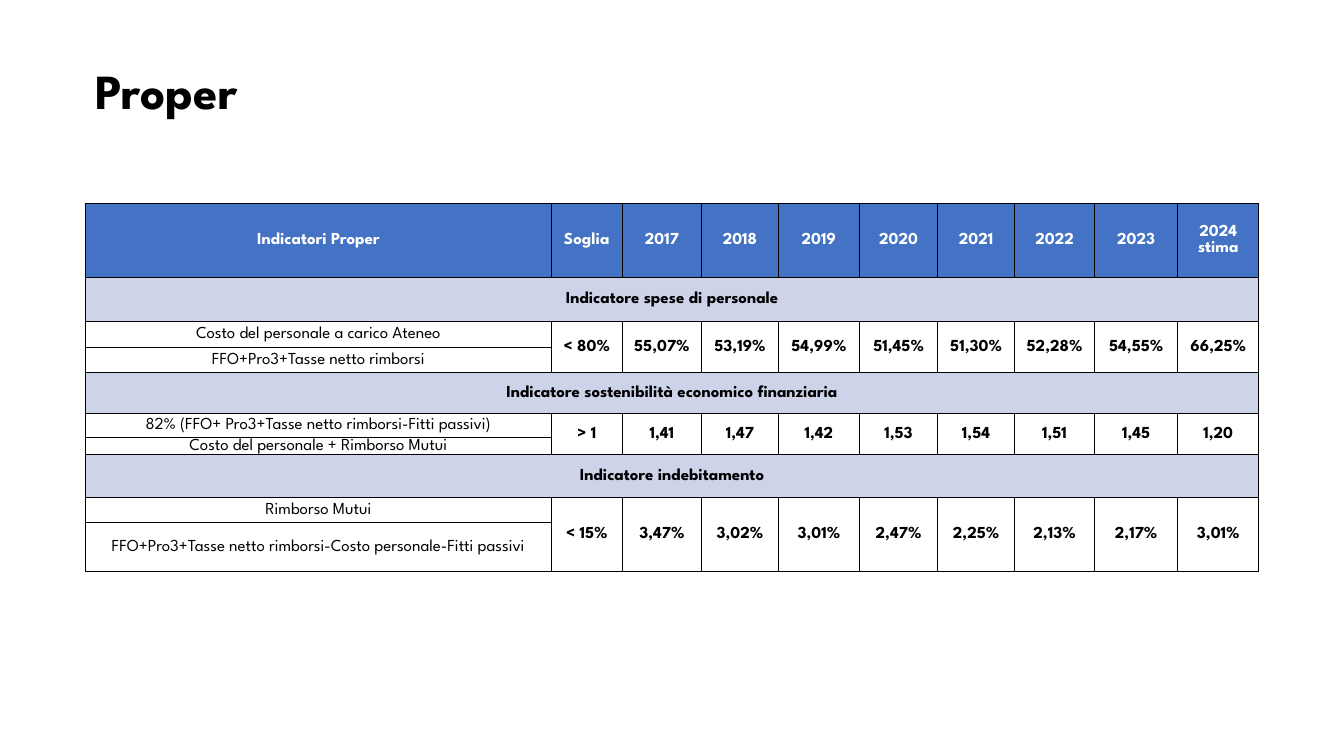
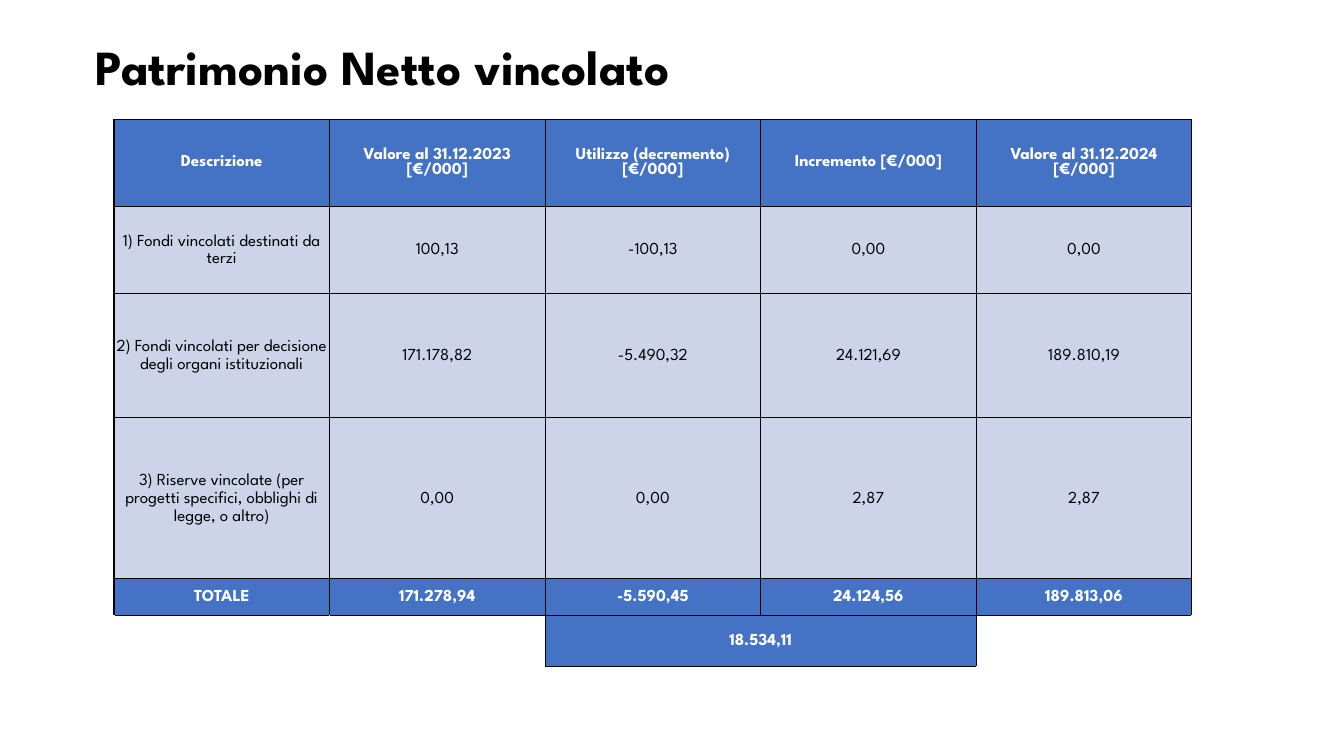
from lxml.etree import SubElement
from pptx import Presentation
from pptx.dml.color import RGBColor
from pptx.enum.text import MSO_ANCHOR as Anchor, MSO_AUTO_SIZE as AutoSize, PP_ALIGN as Align
from pptx.oxml.ns import qn
from pptx.util import Pt

COLORS = {"black": "000000", "white": "FFFFFF", "blue": "4472C4", "pale": "CDD4EA"}
FONT = "League Spartan"
STYLES = {
    "header": {"fill": "blue", "color": "white", "bold": True},
    "band": {"fill": "pale", "bold": True},
    "body": {"fill": "pale", "spacing": 1.15},
    "label": {"fill": "white"},
    "value": {"fill": "white", "bold": True},
}

PROPER_HEAD = ["Indicatori Proper", "Soglia", "2017", "2018", "2019", "2020",
               "2021", "2022", "2023", "2024\nstima"]
PROPER_COLS = [332.6, 50.7, 56.7, 54.8, 58, 55.8, 55, 57.1, 59.5, 57.8]
PROPER_ROWS = [52.6, 31.6, 18.8, 18, 29.2, 17.2, 12.2, 30.4, 18, 35.2]
INDICATORS = [
    ("Indicatore spese di personale",
     "Costo del personale a carico Ateneo",
     "FFO+Pro3+Tasse netto rimborsi",
     ["< 80%", "55,07%", "53,19%", "54,99%", "51,45%", "51,30%", "52,28%", "54,55%", "66,25%"]),
    ("Indicatore sostenibilità economico finanziaria",
     "82% (FFO+ Pro3+Tasse netto rimborsi-Fitti passivi)",
     "Costo del personale + Rimborso Mutui",
     ["> 1", "1,41", "1,47", "1,42", "1,53", "1,54", "1,51", "1,45", "1,20"]),
    ("Indicatore indebitamento",
     "Rimborso Mutui",
     "FFO+Pro3+Tasse netto rimborsi-Costo personale-Fitti passivi",
     ["< 15%", "3,47%", "3,02%", "3,01%", "2,47%", "2,25%", "2,13%", "2,17%", "3,01%"]),
]

EQUITY_ROWS = [62, 62, 89, 115, 26.5, 36]
EQUITY = [
    ("header", ["Descrizione", "Valore al 31.12.2023 [€/000]", "Utilizzo (decremento) [€/000]",
                "Incremento [€/000]", "Valore al 31.12.2024 [€/000]"]),
    ("body", ["1) Fondi vincolati destinati da terzi", "100,13", "-100,13", "0,00", "0,00"]),
    ("body", ["2) Fondi vincolati per decisione degli organi istituzionali",
              "171.178,82", "-5.490,32", "24.121,69", "189.810,19"]),
    ("body", ["3) Riserve vincolate (per progetti specifici, obblighi di legge, o altro)",
              "0,00", "0,00", "2,87", "2,87"]),
    ("header", ["TOTALE", "171.278,94", "-5.590,45", "24.124,56", "189.813,06"]),
]


def rgb(name):
    """Return the named colour."""
    return RGBColor.from_string(COLORS[name])


def write(tf, text, size=12, color="black", bold=False, align=Align.CENTER, spacing=None):
    """Write text into a frame, one paragraph a line."""
    for i, line in enumerate(text.split("\n")):
        p = tf.add_paragraph() if i else tf.paragraphs[0]
        p.alignment = align
        p.line_spacing = spacing
        r = p.add_run()
        r.text = line
        r.font.name, r.font.size, r.font.bold = FONT, Pt(size), bold
        r.font.color.rgb = rgb(color)


def add_slide(prs, title, top):
    """Add a slide with its title."""
    s = prs.slides.add_slide(prs.slide_layouts[5])
    sp = s.shapes.title
    sp.left, sp.top, sp.width, sp.height = Pt(61.2), Pt(top), Pt(838.8), Pt(78.5)
    tf = sp.text_frame
    tf.auto_size, tf.vertical_anchor, tf.word_wrap = AutoSize.NONE, Anchor.TOP, True
    write(tf, title, size=35, bold=True, align=Align.LEFT, spacing=0.9)
    return s


def add_grid(s, left, top, cols, rows):
    """Add a plain table with the given column widths and row heights."""
    table = s.shapes.add_table(len(rows), len(cols), Pt(left), Pt(top),
                               Pt(sum(cols)), Pt(sum(rows))).table
    table.first_row = table.horz_banding = False
    for col, width in zip(table.columns, cols):
        col.width = Pt(width)
    for row, height in zip(table.rows, rows):
        row.height = Pt(height)
    return table


def format_cell(cell, fill="white", sides="LRTB"):
    """Set the margins, borders and fill of a cell."""
    cell.margin_left = cell.margin_right = Pt(1)
    cell.margin_top = cell.margin_bottom = 0
    cell.vertical_anchor = Anchor.MIDDLE
    tc_pr = cell._tc.get_or_add_tcPr()
    for side in sides:
        ln = SubElement(tc_pr, qn(f"a:ln{side}"), w=str(Pt(1)))
        solid = SubElement(ln, qn("a:solidFill"))
        SubElement(solid, qn("a:srgbClr"), val=COLORS["black"])
    cell.fill.solid()
    cell.fill.fore_color.rgb = rgb(fill)


def fill_cell(table, row, col, text, style, rows=1, cols=1):
    """Fill a cell, merged over the given rows and columns."""
    look = dict(STYLES[style])
    fill = look.pop("fill")
    for i in range(row, row + rows):
        for j in range(col, col + cols):
            format_cell(table.cell(i, j), fill)
    cell = table.cell(row, col)
    if rows * cols > 1:
        cell.merge(table.cell(row + rows - 1, col + cols - 1))
    write(cell.text_frame, text, **look)


def add_proper(prs):
    """Build the slide of the Proper indicators."""
    s = add_slide(prs, "Proper", 44.6)
    table = add_grid(s, 61.2, 145.4, PROPER_COLS, PROPER_ROWS)
    for j, text in enumerate(PROPER_HEAD):
        fill_cell(table, 0, j, text, "header")
    for k, (name, numerator, denominator, values) in enumerate(INDICATORS):
        row = 1 + 3 * k
        fill_cell(table, row, 0, name, "band", cols=len(PROPER_COLS))
        fill_cell(table, row + 1, 0, numerator, "label")
        fill_cell(table, row + 2, 0, denominator, "label")
        for j, value in enumerate(values, 1):
            fill_cell(table, row + 1, j, value, "value", rows=2)


def add_equity(prs):
    """Build the slide of the restricted equity."""
    s = add_slide(prs, "Patrimonio Netto vincolato", 27.4)
    table = add_grid(s, 81.4, 85.4, [154] * 5, EQUITY_ROWS)
    for i, (style, texts) in enumerate(EQUITY):
        for j, text in enumerate(texts):
            fill_cell(table, i, j, text, style)
    last = len(EQUITY)
    for j, sides in ((0, "T"), (1, "RT"), (4, "LT")):
        format_cell(table.cell(last, j), sides=sides)
    fill_cell(table, last, 2, "18.534,11", "header", cols=2)


def main():
    """Build and save the presentation."""
    prs = Presentation()
    prs.slide_width, prs.slide_height = Pt(960), Pt(540)
    add_proper(prs)
    add_equity(prs)
    prs.save("out.pptx")


if __name__ == "__main__":
    main()
